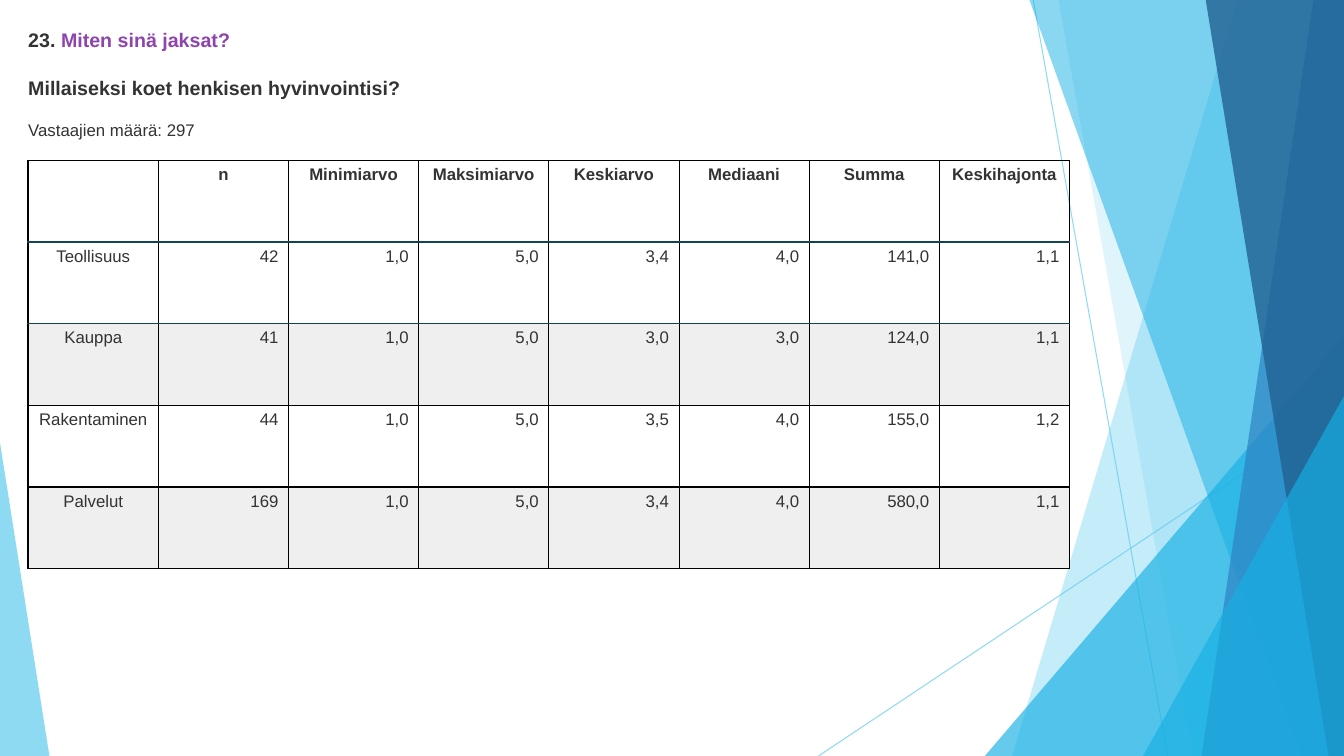
from lxml.etree import SubElement
from pptx import Presentation
from pptx.dml.color import RGBColor
from pptx.enum.shapes import MSO_CONNECTOR, MSO_SHAPE
from pptx.enum.text import PP_ALIGN
from pptx.oxml.ns import qn
from pptx.util import Inches, Pt

INK, PURPLE, BLACK, TEAL, GREY = "333333", "8E44AD", "000000", "124456", "EFEFEF"
SKY, CYAN, BLUE, NAVY = "5FCBEF", "17B0E4", "2E83C3", "226292"
MARGIN = 2.1
BLEED = -0.11

HEADER = ["", "n", "Minimiarvo", "Maksimiarvo", "Keskiarvo", "Mediaani", "Summa", "Keskihajonta"]
SECTORS = [
    ["Teollisuus", "42", "1,0", "5,0", "3,4", "4,0", "141,0", "1,1"],
    ["Kauppa", "41", "1,0", "5,0", "3,0", "3,0", "124,0", "1,1"],
    ["Rakentaminen", "44", "1,0", "5,0", "3,5", "4,0", "155,0", "1,2"],
    ["Palvelut", "169", "1,0", "5,0", "3,4", "4,0", "580,0", "1,1"],
]
ROW_EDGES = [(BLACK, 0.75), (TEAL, 2), (TEAL, 1.25), (BLACK, 0.75), (BLACK, 1.25), (BLACK, 0.75)]


def colour(code):
    return RGBColor.from_string(code)


class Page:
    font = "Arial"

    def __init__(self, deck):
        self.width, self.height = deck.slide_width, deck.slide_height
        self.slide = deck.slides.add_slide(deck.slide_layouts[6])
        self.shapes = self.slide.shapes

    def across(self, percent):
        return round(self.width * percent / 100)

    def down(self, percent):
        return round(self.height * percent / 100)

    def area(self, left, top, width, height):
        return self.across(left), self.down(top), self.across(width), self.down(height)

    def fade(self, fill_owner, opacity):
        for tint in fill_owner.iter(qn("a:srgbClr")):
            SubElement(tint, qn("a:alpha"), val=str(opacity * 1000))

    def paint(self, shape, code, opacity):
        shape.shadow.inherit = False
        shape.fill.solid()
        shape.fill.fore_color.rgb = colour(code)
        shape.line.fill.background()
        self.fade(shape._element.spPr, opacity)

    def line(self, start, end):
        connector = self.shapes.add_connector(
            MSO_CONNECTOR.STRAIGHT,
            self.across(start[0]), self.down(start[1]),
            self.across(end[0]), self.down(end[1]))
        connector.line.color.rgb = colour(SKY)
        connector.line.width = Pt(0.75)
        properties = connector._element.spPr
        self.fade(properties, 70)
        SubElement(properties, qn("a:effectLst"))

    def right_band(self, top_x, bottom_x, code, opacity):
        corners = [(100, BLEED), (100, 100), (bottom_x, 100)]
        builder = self.shapes.build_freeform(self.across(top_x), self.down(BLEED))
        builder.add_line_segments([(self.across(x), self.down(y)) for x, y in corners])
        self.paint(builder.convert_to_shape(), code, opacity)

    def corner(self, left, top, width, apex, code, opacity):
        shape = self.shapes.add_shape(
            MSO_SHAPE.ISOSCELES_TRIANGLE, *self.area(left, top, width, 100 - top))
        shape.adjustments[0] = apex
        self.paint(shape, code, opacity)

    def style(self, span, size, code=INK, bold=False):
        span.font.name = self.font
        span.font.size = Pt(size)
        span.font.bold = bold
        span.font.color.rgb = colour(code)

    def text(self, top, height, paragraphs, size, bold=False, gap=0):
        box = self.shapes.add_textbox(*self.area(MARGIN, top, 95.85, height))
        frame = box.text_frame
        frame.word_wrap = True
        frame.margin_left = frame.margin_right = frame.margin_top = frame.margin_bottom = 0
        for index, pieces in enumerate(paragraphs):
            para = frame.add_paragraph() if index else frame.paragraphs[0]
            para.space_before = Pt(gap if index else 0)
            for words, code in pieces:
                span = para.add_run()
                span.text = words
                self.style(span, size, code, bold)

    def border(self, cell, side, code, width):
        edge = SubElement(cell._tc.get_or_add_tcPr(), qn(f"a:ln{side}"), w=str(Pt(width)))
        SubElement(SubElement(edge, qn("a:solidFill")), qn("a:srgbClr"), val=code)

    def table(self, top, width, height, rows):
        frame = self.shapes.add_table(
            len(rows), len(rows[0]), *self.area(MARGIN, top, width, height))
        table = frame.table
        table.first_row = table.horz_banding = False
        for row, values in enumerate(rows):
            for column, value in enumerate(values):
                cell = table.cell(row, column)
                cell.text_frame.text = value
                para = cell.text_frame.paragraphs[0]
                centred = row == 0 or column == 0
                para.alignment = PP_ALIGN.CENTER if centred else PP_ALIGN.RIGHT
                for span in para.runs:
                    self.style(span, 12, bold=row == 0)
                self.border(cell, "L", BLACK, 0.75 if column else 1.25)
                self.border(cell, "R", BLACK, 0.75)
                self.border(cell, "T", *ROW_EDGES[row])
                self.border(cell, "B", *ROW_EDGES[row + 1])
                if row and row % 2 == 0:
                    cell.fill.solid()
                    cell.fill.fore_color.rgb = colour(GREY)
                else:
                    cell.fill.background()


def main():
    deck = Presentation()
    deck.slide_width, deck.slide_height = Inches(13.33), Inches(7.5)
    page = Page(deck)

    page.line((76.88, 0), (86.88, 100))
    page.line((100, 53.73), (60.9, 100))
    page.right_band(92.1, 75.3, SKY, 36)
    page.right_band(78.75, 88.73, SKY, 20)
    page.corner(73.28, 44.4, 26.72, 1, CYAN, 66)
    page.right_band(76.58, 96.83, CYAN, 50)
    page.right_band(97.73, 89.4, BLUE, 70)
    page.right_band(89.7, 98.85, NAVY, 80)
    page.corner(85.05, 52.4, 14.95, 1, CYAN, 66)
    page.corner(0, 58.53, 3.68, 0, SKY, 70)

    heading = [
        [("23. ", INK), ("Miten sinä jaksat?", PURPLE)],
        [("Millaiseksi koet henkisen hyvinvointisi?", INK)],
    ]
    page.text(3.73, 9.33, heading, 14, bold=True, gap=17.5)
    page.text(15.87, 2.67, [[("Vastaajien määrä: 297", INK)]], 12)
    page.table(21.2, 77.48, 54, [HEADER] + SECTORS)
    deck.save("out.pptx")


if __name__ == "__main__":
    main()
